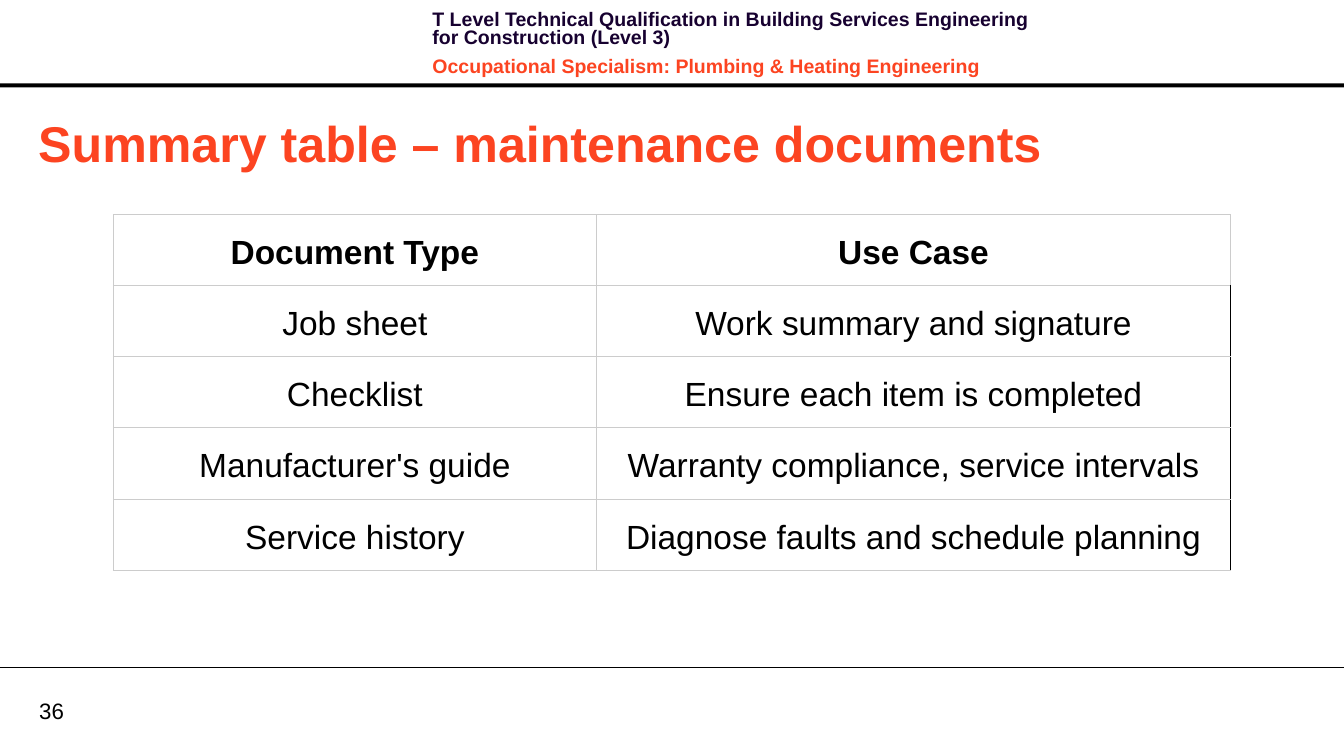
from dataclasses import dataclass
from typing import Optional

from lxml import etree
from pptx import Presentation
from pptx.dml.color import RGBColor
from pptx.enum.shapes import MSO_CONNECTOR, MSO_SHAPE
from pptx.enum.text import MSO_ANCHOR, PP_ALIGN
from pptx.oxml.ns import qn
from pptx.slide import Slide
from pptx.table import _Cell
from pptx.text.text import TextFrame
from pptx.util import Length, Pt

BLACK = RGBColor(0x00, 0x00, 0x00)
GREY = RGBColor(0xCC, 0xCC, 0xCC)
NAVY = RGBColor(0x17, 0x01, 0x30)
ORANGE = RGBColor(0xFC, 0x44, 0x21)

LEFT, CENTER = PP_ALIGN.LEFT, PP_ALIGN.CENTER
TOP, MIDDLE = MSO_ANCHOR.TOP, MSO_ANCHOR.MIDDLE
RECTANGLE, STRAIGHT = MSO_SHAPE.RECTANGLE, MSO_CONNECTOR.STRAIGHT

FONT = "Arial"
SLIDE_WIDTH, SLIDE_HEIGHT = Pt(964.08), Pt(538.56)
BORDER_WIDTH = Pt(0.83)
COLUMN_WIDTHS = (Pt(346.5), Pt(454.9))
ROW_HEIGHT = Pt(51.05)


@dataclass(frozen=True)
class DocumentRow:
    document: str
    use_case: str
    heading: bool = False


@dataclass(frozen=True)
class HeaderLine:
    text: str
    color: RGBColor
    space_before: Length


DOCUMENT_ROWS = (
    DocumentRow("Document Type", "Use Case", heading=True),
    DocumentRow("Job sheet", "Work summary and signature"),
    DocumentRow("Checklist", "Ensure each item is completed"),
    DocumentRow("Manufacturer's guide", "Warranty compliance, service intervals"),
    DocumentRow("Service history", "Diagnose faults and schedule planning"),
)

HEADER_LINES = (
    HeaderLine(
        "T Level Technical Qualification in Building Services Engineering "
        "for Construction (Level 3)", NAVY, Pt(0)),
    HeaderLine("Occupational Specialism: Plumbing & Heating Engineering", ORANGE, Pt(4)),
)


def write(frame: TextFrame, text: str, *, size: Length, color: RGBColor = BLACK,
          bold: bool = False, align: PP_ALIGN = LEFT,
          line_spacing: float | Length = 1.0, space_before: Length = Pt(0),
          space_after: Length = Pt(0)) -> None:
    paragraph = frame.paragraphs[-1]
    if paragraph.runs:
        paragraph = frame.add_paragraph()
    paragraph.alignment = align
    paragraph.line_spacing = line_spacing
    paragraph.space_before, paragraph.space_after = space_before, space_after
    run = paragraph.add_run()
    run.text = text
    run.font.name, run.font.size, run.font.bold = FONT, size, bold
    run.font.color.rgb = color


def set_frame(frame: TextFrame, anchor: MSO_ANCHOR, side: Length, vertical: Length) -> None:
    frame.word_wrap = True
    frame.vertical_anchor = anchor
    frame.margin_left = frame.margin_right = side
    frame.margin_top = frame.margin_bottom = vertical


def set_borders(cell: _Cell, right_color: RGBColor) -> None:
    properties = cell._tc.get_or_add_tcPr()
    for edge, color in (("L", GREY), ("R", right_color), ("T", GREY), ("B", GREY)):
        line = etree.SubElement(properties, qn(f"a:ln{edge}"), w=str(BORDER_WIDTH))
        fill = etree.SubElement(line, qn("a:solidFill"))
        etree.SubElement(fill, qn("a:srgbClr"), val=str(color))


def add_header(slide: Slide) -> None:
    band = slide.shapes.add_shape(RECTANGLE, Pt(0), Pt(59.76), SLIDE_WIDTH, Pt(2.88))
    band.shadow.inherit = False
    band.fill.solid()
    band.fill.fore_color.rgb = BLACK
    band.line.fill.background()
    qualification = slide.shapes.add_textbox(Pt(303.1), Pt(5), Pt(458.6), Pt(46)).text_frame
    set_frame(qualification, TOP, Pt(7.2), Pt(3.6))
    for line in HEADER_LINES:
        write(qualification, line.text, size=Pt(14), color=line.color, bold=True,
              line_spacing=Pt(13.1), space_before=line.space_before, space_after=Pt(4))


def add_footer(slide: Slide) -> None:
    rule = slide.shapes.add_connector(STRAIGHT, Pt(0), Pt(478.8), SLIDE_WIDTH, Pt(478.8))
    rule.line.color.rgb = BLACK
    rule.line.width = Pt(0.75)
    etree.SubElement(rule._element.spPr, qn("a:effectLst"))
    page_number = slide.shapes.add_textbox(Pt(28.1), Pt(499.7), Pt(46), Pt(19.4)).text_frame
    set_frame(page_number, MIDDLE, Pt(0), Pt(0))
    write(page_number, "36", size=Pt(16))


def add_title(slide: Slide) -> None:
    title = slide.shapes.title
    title.left, title.top, title.width, title.height = Pt(20.2), Pt(76.3), Pt(915.8), Pt(51.1)
    set_frame(title.text_frame, MIDDLE, Pt(7.2), Pt(3.6))
    write(title.text_frame, "Summary table – maintenance documents",
          size=Pt(36), color=ORANGE, bold=True)


def fill_cell(cell: _Cell, text: str, heading: bool, side: Length,
              right_color: RGBColor) -> None:
    cell.vertical_anchor = MIDDLE
    cell.margin_left = cell.margin_right = side
    cell.margin_top = cell.margin_bottom = Pt(1.5)
    set_borders(cell, right_color)
    cell.fill.background()
    write(cell.text_frame, text, size=Pt(24), bold=heading, align=CENTER, line_spacing=1.15)


def add_document_table(slide: Slide) -> None:
    row_count = len(DOCUMENT_ROWS)
    table = slide.shapes.add_table(
        row_count, len(COLUMN_WIDTHS), Pt(81.3), Pt(153.8),
        sum(COLUMN_WIDTHS), ROW_HEIGHT * row_count).table
    table.first_row = table.horz_banding = False
    for column, width in zip(table.columns, COLUMN_WIDTHS):
        column.width = width
    for index, entry in enumerate(DOCUMENT_ROWS):
        table.rows[index].height = ROW_HEIGHT
        fill_cell(table.cell(index, 0), entry.document, entry.heading, Pt(2.2), GREY)
        use_case_side = Pt(2.2) if entry.heading else Pt(7.2)
        edge_color = GREY if entry.heading else BLACK
        fill_cell(table.cell(index, 1), entry.use_case, entry.heading,
                  use_case_side, edge_color)


def main() -> None:
    presentation = Presentation()
    presentation.slide_width, presentation.slide_height = SLIDE_WIDTH, SLIDE_HEIGHT
    title_only = presentation.slide_layouts.get_by_name("Title Only")
    slide = presentation.slides.add_slide(title_only)
    add_footer(slide)
    add_header(slide)
    add_title(slide)
    add_document_table(slide)
    presentation.save("out.pptx")


if __name__ == "__main__":
    main()
